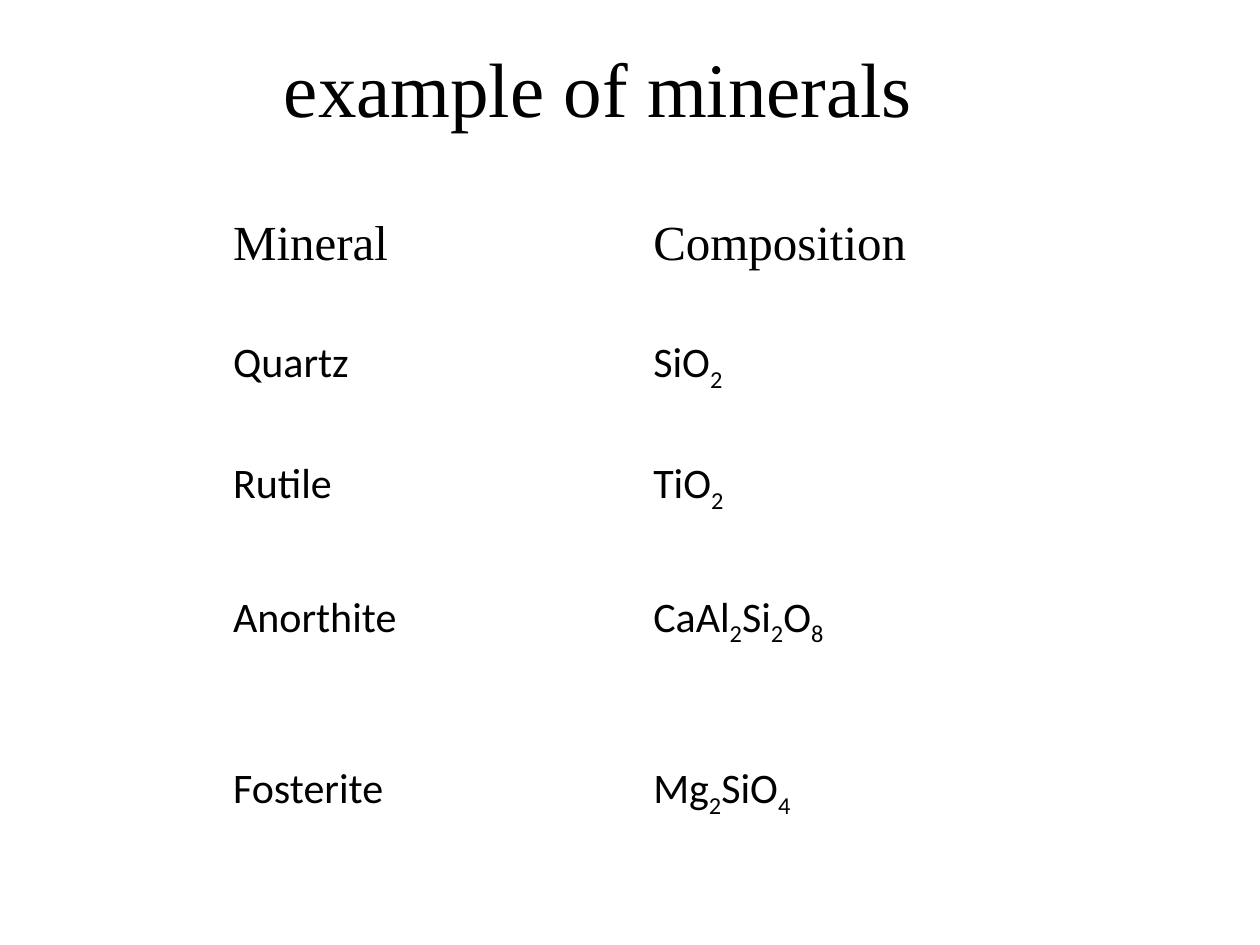
import pptx
import pptx.dml.color
import pptx.enum.text
import pptx.oxml.ns
import pptx.util
import lxml.etree

BLACK = pptx.dml.color.RGBColor(0x00, 0x00, 0x00)
WHITE = pptx.dml.color.RGBColor(0xFF, 0xFF, 0xFF)

WIDTH = pptx.util.Inches(10)
HEIGHT = pptx.util.Inches(7.5)

TITLE_BOX = (0.25 / 10, 0.25 / 7.5, 9 / 10, 0.87 / 7.5)
TABLE_BOX = (1.75 / 10, 1.67 / 7.5, 6.67 / 10, 4.73 / 7.5)

FORMATS = {
    "title": {"name": "Times New Roman", "size": pptx.util.Pt(44), "bold": False},
    "header": {"name": "Times New Roman", "size": pptx.util.Pt(28), "bold": False},
    "body": {"name": "Calibri", "size": pptx.util.Pt(24), "bold": False},
}

ROWS = [
    ("Mineral", "Composition"),
    ("Quartz", "SiO_2"),
    ("Rutile", "TiO_2"),
    ("", ""),
    ("Anorthite", "CaAl_2Si_2O_8"),
    ("Fosterite", "Mg_2SiO_4"),
]
ROW_WEIGHTS = [0.96, 0.96, 0.55, 0.51, 1.36, 0.39]


def place(box):
    left, top, width, height = box
    return [int(left * WIDTH), int(top * HEIGHT), int(width * WIDTH), int(height * HEIGHT)]


def add_span(para, text, style, subscript=False):
    span = para.add_run()
    span.text = text
    for name, value in FORMATS[style].items():
        setattr(span.font, name, value)
    span.font.color.rgb = BLACK
    if subscript:
        span._r.get_or_add_rPr().set("baseline", "-25000")


def write_formula(para, formula, style):
    first, *parts = formula.split("_")
    add_span(para, first, style)
    for part in parts:
        add_span(para, part[0], style, subscript=True)
        if part[1:]:
            add_span(para, part[1:], style)


def add_borders(cell, bottom_width):
    properties = cell._tc.get_or_add_tcPr()
    widths = {"a:lnL": 1, "a:lnR": 1, "a:lnT": 1, "a:lnB": bottom_width}
    for tag, width in widths.items():
        line = lxml.etree.SubElement(properties, pptx.oxml.ns.qn(tag), w=str(pptx.util.Pt(width)))
        fill = lxml.etree.SubElement(line, pptx.oxml.ns.qn("a:solidFill"))
        lxml.etree.SubElement(fill, pptx.oxml.ns.qn("a:srgbClr"), val=str(WHITE))


def build_title(page, box):
    title = page.shapes.title
    title.left, title.top, title.width, title.height = place(box)
    title.text_frame.vertical_anchor = pptx.enum.text.MSO_ANCHOR.MIDDLE
    para = title.text_frame.paragraphs[0]
    para.alignment = pptx.enum.text.PP_ALIGN.CENTER
    add_span(para, "example of minerals", "title")


def build_minerals(page, box):
    left, top, width, height = place(box)
    table = page.shapes.add_table(len(ROWS), 2, left, top, width, height).table
    table.horz_banding = False
    for row, weight in zip(table.rows, ROW_WEIGHTS):
        row.height = int(height * weight / sum(ROW_WEIGHTS))
    for row_index, texts in enumerate(ROWS):
        is_header = row_index == 0
        for column_index, text in enumerate(texts):
            cell = table.cell(row_index, column_index)
            add_borders(cell, 3 if is_header else 1)
            cell.fill.background()
            if text:
                para = cell.text_frame.paragraphs[0]
                write_formula(para, text, "header" if is_header else "body")


def main():
    deck = pptx.Presentation()
    deck.slide_width, deck.slide_height = WIDTH, HEIGHT
    page = deck.slides.add_slide(deck.slide_layouts.get_by_name("Title Only"))
    build_title(page, TITLE_BOX)
    build_minerals(page, TABLE_BOX)
    deck.save("out.pptx")


if __name__ == "__main__":
    main()
